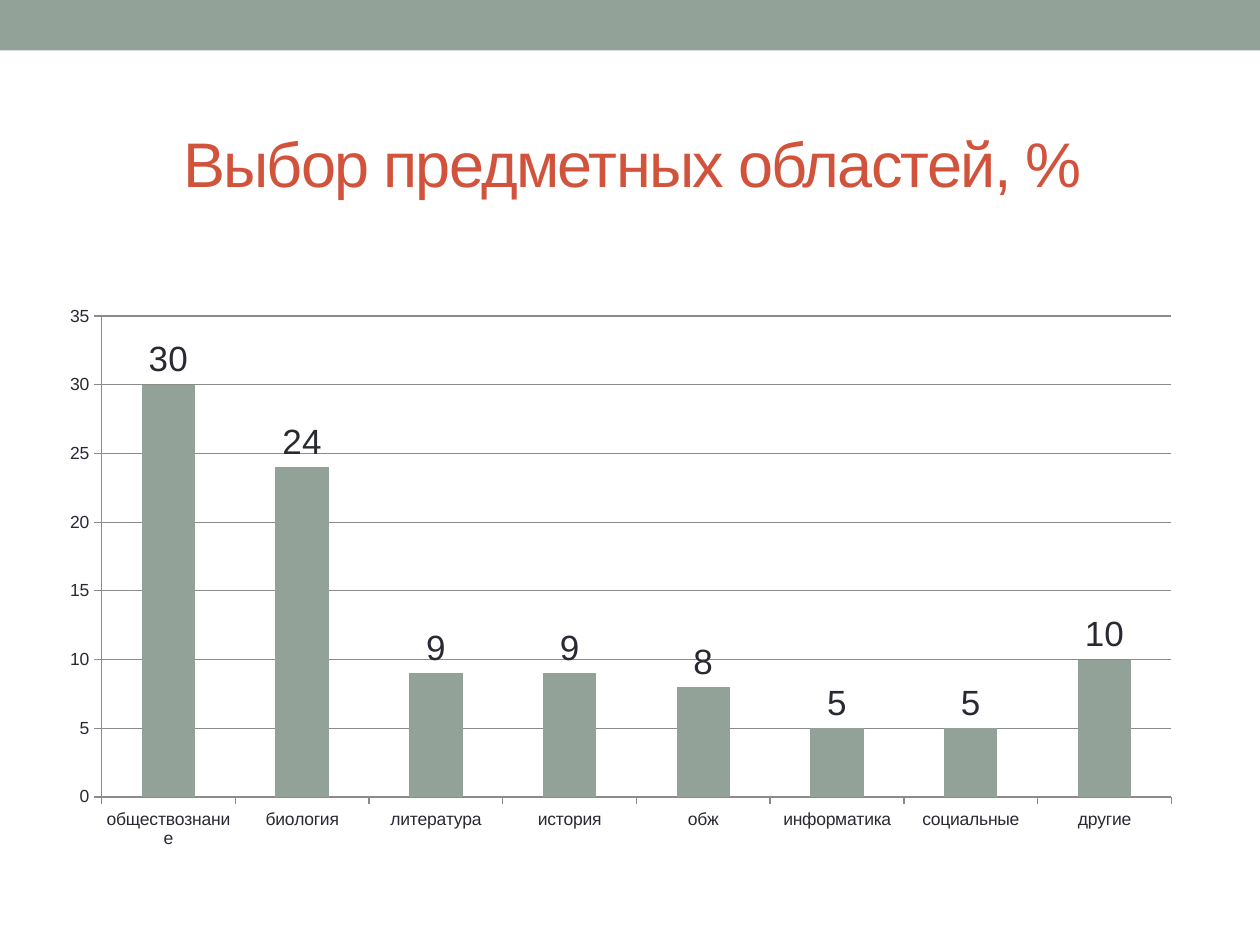
import pptx
import pptx.chart.data
import pptx.dml.color
import pptx.enum.chart
import pptx.enum.shapes
import pptx.enum.text
import pptx.oxml
import pptx.oxml.ns
import pptx.util
from pptx.util import Inches


def color(value):
    return pptx.dml.color.RGBColor.from_string(value)


deck = pptx.Presentation()
deck.slide_width = Inches(10)
deck.slide_height = Inches(7.5)
page = deck.slides.add_slide(deck.slide_layouts[5])

band = page.shapes.add_shape(
    pptx.enum.shapes.MSO_SHAPE.RECTANGLE, 0, 0, Inches(10), Inches(0.4)
)
band.shadow.inherit = False
band.fill.solid()
band.fill.fore_color.rgb = color("93A299")
band.line.fill.background()

title = page.shapes.title
title.left, title.top = Inches(0.91), Inches(0.99)
title.width, title.height = Inches(8.22), Inches(0.6)
frame = title.text_frame
frame.word_wrap = True
frame.auto_size = pptx.enum.text.MSO_AUTO_SIZE.NONE
frame.vertical_anchor = pptx.enum.text.MSO_ANCHOR.MIDDLE
para = frame.paragraphs[0]
para.alignment = pptx.enum.text.PP_ALIGN.CENTER
span = para.add_run()
span.text = "Выбор предметных областей, %"
span.font.size = pptx.util.Pt(36)
span.font.name = "Arial"
span.font.color.rgb = color("D2533C")
span.font._element.set("spc", "-100")

data = pptx.chart.data.CategoryChartData()
data.categories = [
    "обществознание", "биология", "литература", "история",
    "обж", "информатика", "социальные", "другие",
]
data.add_series("Series 1", [30, 24, 9, 9, 8, 5, 5, 10])
chart = page.shapes.add_chart(
    pptx.enum.chart.XL_CHART_TYPE.COLUMN_CLUSTERED,
    Inches(0.35), Inches(2.33), Inches(9.13), Inches(4.49), data,
).chart
chart.has_title = False
chart.has_legend = False
chart.font.name = "Arial"
chart.font.size = pptx.util.Pt(10)
chart.font.color.rgb = color("292934")

plot = chart.plots[0]
plot.gap_width = 150
plot.vary_by_categories = False
bars = plot.series[0]
bars.format.fill.solid()
bars.format.fill.fore_color.rgb = color("93A299")

labels = bars.data_labels
labels.show_value = True
labels.position = pptx.enum.chart.XL_LABEL_POSITION.OUTSIDE_END
labels.font.name = "Arial"
labels.font.size = pptx.util.Pt(20)
labels.font.color.rgb = color("292934")

value_axis = chart.value_axis
value_axis.minimum_scale = 0
value_axis.maximum_scale = 35
value_axis.major_unit = 5
value_axis.has_major_gridlines = True
for axis in (chart.category_axis, value_axis):
    axis.major_tick_mark = pptx.enum.chart.XL_TICK_MARK.OUTSIDE
    axis.minor_tick_mark = pptx.enum.chart.XL_TICK_MARK.NONE
for line in (
    chart.category_axis.format.line,
    value_axis.format.line,
    value_axis.major_gridlines.format.line,
):
    line.color.rgb = color("8B8B8B")
    line.width = pptx.util.Pt(0.75)

plot_area = chart._chartSpace.chart.plotArea
for layout in plot_area.findall(pptx.oxml.ns.qn("c:layout")):
    plot_area.remove(layout)
plot_area.insert(0, pptx.oxml.parse_xml(
    f'<c:layout {pptx.oxml.ns.nsdecls("c")}><c:manualLayout>'
    '<c:layoutTarget val="inner"/>'
    '<c:xMode val="edge"/><c:yMode val="edge"/>'
    '<c:x val="0.05"/><c:y val="0.04"/>'
    '<c:w val="0.93"/><c:h val="0.85"/>'
    '</c:manualLayout></c:layout>'
))

deck.save("out.pptx")
